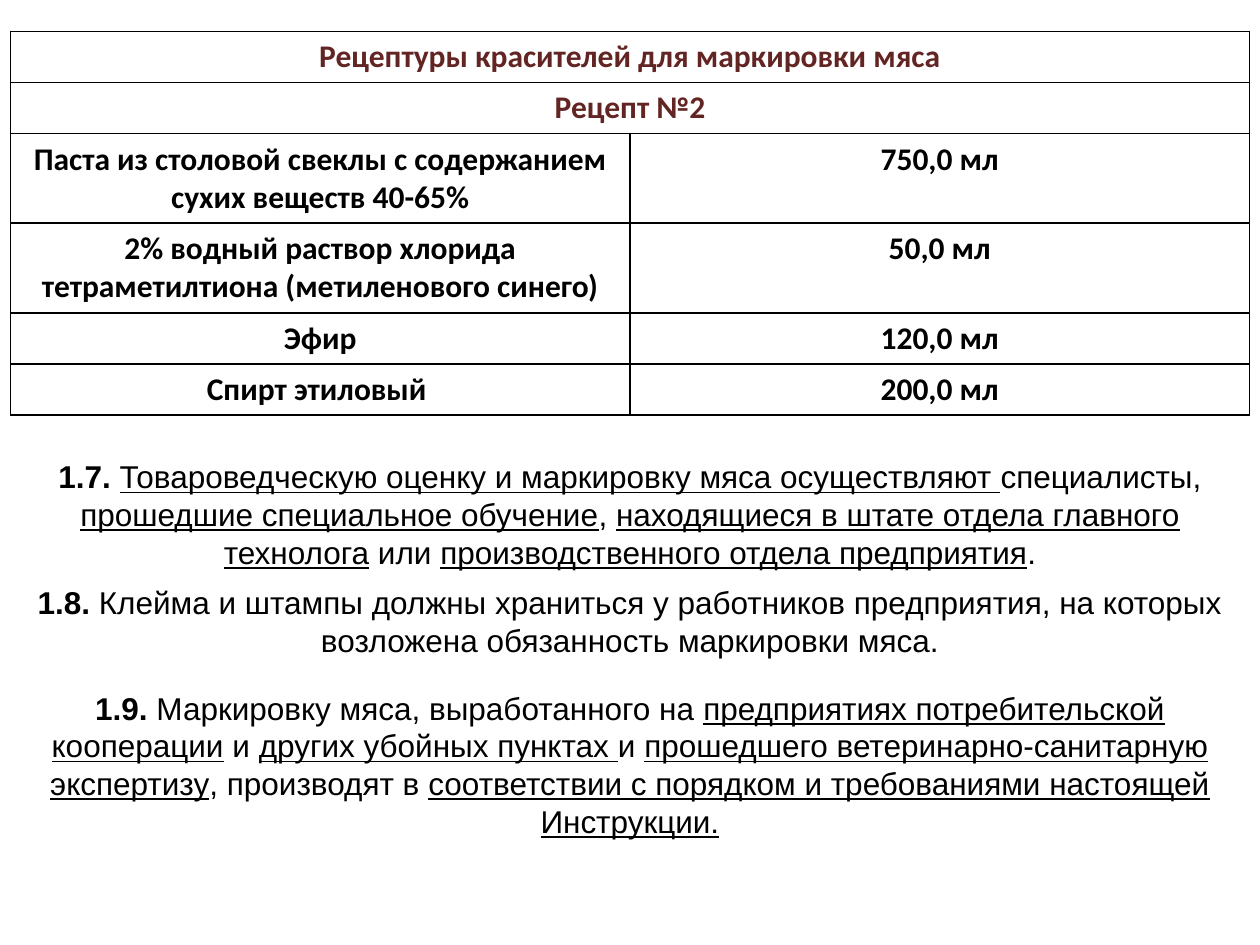
from lxml.etree import SubElement
from pptx import Presentation
from pptx.dml.color import RGBColor
from pptx.enum.text import MSO_AUTO_SIZE, PP_ALIGN
from pptx.oxml.ns import qn
from pptx.util import Pt

BLACK = RGBColor(0, 0, 0)
MAROON = RGBColor(0x63, 0x25, 0x23)

SLIDE_WIDTH = 720
TABLE_LEFT, TABLE_TOP, TABLE_WIDTH = 6, 18, 708
LINE_ROW, DOUBLE_ROW = 29.2, 50.4

HEADINGS = ["Рецептуры красителей для маркировки мяса", "Рецепт №2"]
INGREDIENTS = [
    ("Паста из столовой свеклы с содержанием сухих веществ 40-65%", "750,0 мл", DOUBLE_ROW),
    ("2% водный раствор хлорида тетраметилтиона (метиленового синего)", "50,0 мл", DOUBLE_ROW),
    ("Эфир", "120,0 мл", LINE_ROW),
    ("Спирт этиловый ", "200,0 мл", LINE_ROW),
]

PLAIN, UNDERLINED = False, True
CLAUSES = [
    (257.8, 72.7, "1.7. ", [
        ("Товароведческую оценку и маркировку мяса осуществляют ", UNDERLINED),
        ("специалисты, ", PLAIN),
        ("прошедшие специальное обучение", UNDERLINED),
        (", ", PLAIN),
        ("находящиеся в штате отдела главного технолога", UNDERLINED),
        (" или ", PLAIN),
        ("производственного отдела предприятия", UNDERLINED),
        (".", PLAIN),
    ]),
    (329.8, 51, "1.8. ", [
        ("Клейма и штампы должны храниться у работников предприятия, "
         "на которых возложена обязанность маркировки мяса.", PLAIN),
    ]),
    (390, 94.5, "1.9. ", [
        ("Маркировку мяса, выработанного на ", PLAIN),
        ("предприятиях потребительской кооперации", UNDERLINED),
        (" и ", PLAIN),
        ("других убойных пунктах ", UNDERLINED),
        ("и ", PLAIN),
        ("прошедшего ветеринарно-санитарную экспертизу", UNDERLINED),
        (", производят в ", PLAIN),
        ("соответствии с порядком и требованиями настоящей Инструкции.", UNDERLINED),
    ]),
]


class SlideBuilder:
    text_size = 18
    table_font = "Calibri"
    clause_font = "Arial"

    def __init__(self, slide):
        self.slide = slide

    def run(self, paragraph, text, font_name, color=BLACK, bold=False, underline=False):
        run = paragraph.add_run()
        run.text = text
        font = run.font
        font.name, font.size = font_name, Pt(self.text_size)
        font.bold, font.underline = bold, underline
        font.color.rgb = color

    def border(self, cell):
        properties = cell._tc.get_or_add_tcPr()
        for side in ("a:lnL", "a:lnR", "a:lnT", "a:lnB"):
            line = SubElement(properties, qn(side), w=str(Pt(1)))
            fill = SubElement(line, qn("a:solidFill"))
            SubElement(fill, qn("a:srgbClr"), val=str(BLACK))

    def cell_text(self, cell, text, color):
        paragraph = cell.text_frame.paragraphs[0]
        paragraph.alignment = PP_ALIGN.CENTER
        self.run(paragraph, text, self.table_font, color, bold=True)

    def recipe_table(self, headings, ingredients):
        heights = [LINE_ROW] * len(headings) + [height for _, _, height in ingredients]
        table = self.slide.shapes.add_table(
            len(heights), 2, Pt(TABLE_LEFT), Pt(TABLE_TOP), Pt(TABLE_WIDTH), Pt(sum(heights))
        ).table
        table.first_row = table.horz_banding = False
        for row, height in zip(table.rows, heights):
            row.height = Pt(height)
        for cell in table.iter_cells():
            self.border(cell)
            cell.fill.background()
        for index, heading in enumerate(headings):
            table.cell(index, 0).merge(table.cell(index, 1))
            self.cell_text(table.cell(index, 0), heading, MAROON)
        for index, (name, amount, _) in enumerate(ingredients, len(headings)):
            self.cell_text(table.cell(index, 0), name, BLACK)
            self.cell_text(table.cell(index, 1), amount, BLACK)

    def clause(self, top, height, number, parts):
        shape = self.slide.shapes.add_textbox(0, Pt(top), Pt(SLIDE_WIDTH), Pt(height))
        frame = shape.text_frame
        frame.word_wrap = True
        frame.auto_size = MSO_AUTO_SIZE.SHAPE_TO_FIT_TEXT
        paragraph = frame.paragraphs[0]
        paragraph.alignment = PP_ALIGN.CENTER
        self.run(paragraph, number, self.clause_font, bold=True)
        for text, underline in parts:
            self.run(paragraph, text, self.clause_font, underline=underline)


def main():
    presentation = Presentation()
    presentation.slide_width, presentation.slide_height = Pt(SLIDE_WIDTH), Pt(540)
    builder = SlideBuilder(presentation.slides.add_slide(presentation.slide_layouts[6]))
    builder.recipe_table(HEADINGS, INGREDIENTS)
    for clause in CLAUSES:
        builder.clause(*clause)
    presentation.save("out.pptx")


if __name__ == "__main__":
    main()
